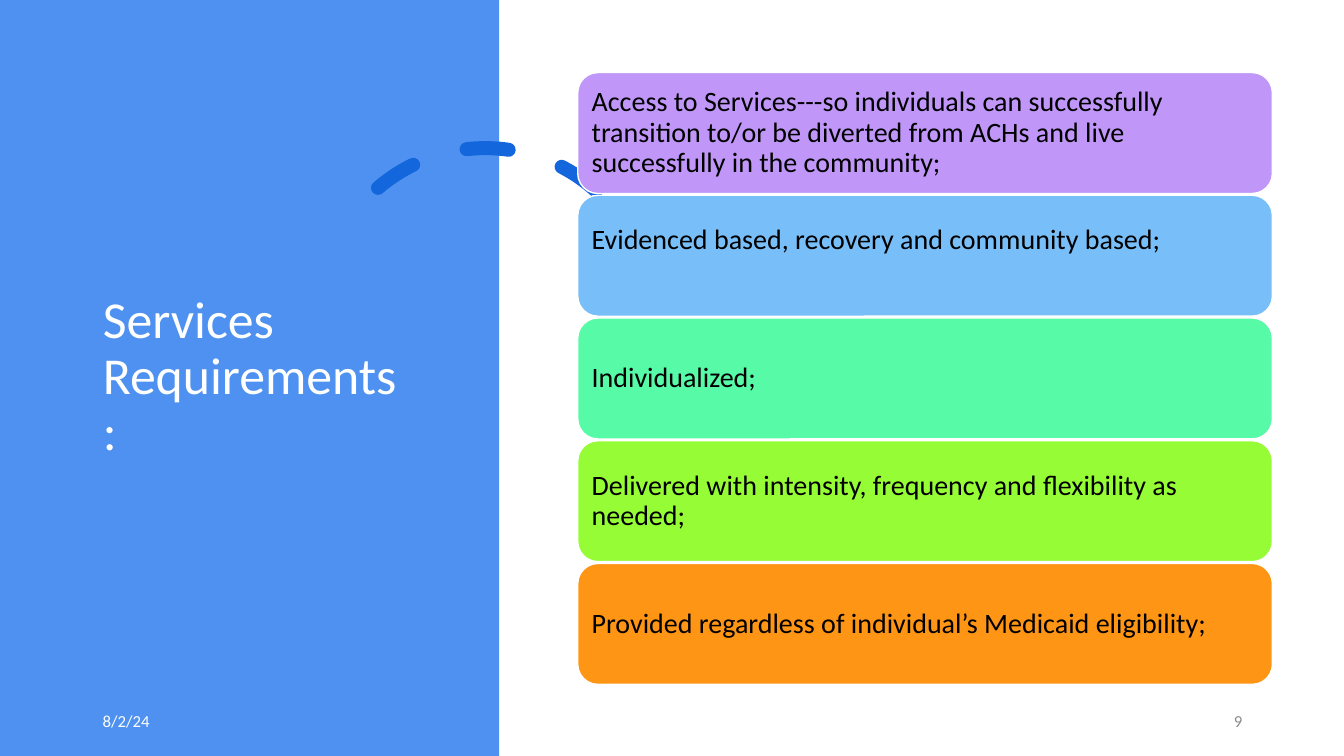
"""Build the Services Requirements slide with five stacked requirement cards."""
from pptx import Presentation
from pptx.dml.color import RGBColor
from pptx.enum import dml, shapes, text
from pptx.util import Inches, Pt

WHITE = RGBColor(0xFF, 0xFF, 0xFF)
BLACK = RGBColor(0x00, 0x00, 0x00)
GRAY = RGBColor(0x8C, 0x8C, 0x8C)
PANEL_BLUE = RGBColor(0x4E, 0x91, 0xF0)
ARC_BLUE = RGBColor(0x13, 0x66, 0xDC)
PURPLE = RGBColor(0xC0, 0x97, 0xF8)
SKY = RGBColor(0x78, 0xBE, 0xF8)
MINT = RGBColor(0x57, 0xFA, 0xA6)
LIME = RGBColor(0x96, 0xFC, 0x36)
ORANGE = RGBColor(0xFF, 0x95, 0x14)

FONT = "Calibri"
CARD_TOP, CARD_HEIGHT, CARD_STEP = 0.72, 1.2, 1.2175
CARD_INSET = 0.14
REQUIREMENTS = [
    ("Access to Services---so individuals can successfully transition to/or be "
     "diverted from ACHs and live successfully in the community;", PURPLE, 0),
    ("Evidenced based, recovery and community based;", SKY, 0.3),
    ("Individualized;", MINT, 0),
    ("Delivered with intensity, frequency and flexibility as needed;", LIME, 0),
    ("Provided regardless of individual’s Medicaid eligibility;", ORANGE, 0),
]


def write(frame, words, size, color, align=text.PP_ALIGN.LEFT, spacing=None):
    frame.word_wrap = True
    frame.auto_size = text.MSO_AUTO_SIZE.NONE
    frame.vertical_anchor = text.MSO_ANCHOR.MIDDLE
    para = frame.paragraphs[0]
    para.text = words
    para.alignment = align
    para.line_spacing = spacing
    para.font.name = FONT
    para.font.size = Pt(size)
    para.font.color.rgb = color


def add_panel(page):
    panel = page.shapes.add_shape(
        shapes.MSO_SHAPE.RECTANGLE, 0, 0, Inches(4.95), Inches(7.5))
    panel.shadow.inherit = False
    panel.fill.solid()
    panel.fill.fore_color.rgb = PANEL_BLUE
    panel.line.fill.background()


def add_dashed_arc(page):
    arc = page.shapes.add_shape(
        shapes.MSO_SHAPE.ARC, Inches(3.18), Inches(1.47), Inches(3.27), Inches(3.27))
    arc.shadow.inherit = False
    arc.rotation = 345.8
    arc.adjustments[0] = 146.13
    arc.adjustments[1] = 0
    arc.fill.background()
    arc.line.color.rgb = ARC_BLUE
    arc.line.width = Pt(10)
    arc.line.dash_style = dml.MSO_LINE.DASH
    arc.line._get_or_add_ln().set("cap", "rnd")


def add_title(page, words):
    title = page.shapes.title
    title.left, title.top = Inches(0.92), Inches(0.7)
    title.width, title.height = Inches(3.23), Inches(6.09)
    write(title.text_frame, words, 37, WHITE, spacing=0.9)
    page.shapes._spTree.append(title._element)


def add_footer(page, words, left, width, color, align):
    box = page.shapes.add_textbox(
        Inches(left), Inches(6.95), Inches(width), Inches(0.4))
    write(box.text_frame, words, 12, color, align)


def add_card(page, index, words, color, lift):
    card = page.shapes.add_shape(
        shapes.MSO_SHAPE.ROUNDED_RECTANGLE, Inches(5.73),
        Inches(CARD_TOP + index * CARD_STEP), Inches(6.89), Inches(CARD_HEIGHT))
    card.shadow.inherit = False
    card.fill.solid()
    card.fill.fore_color.rgb = color
    card.line.color.rgb = WHITE
    card.line.width = Pt(1)
    frame = card.text_frame
    frame.margin_left = frame.margin_right = Inches(0.08)
    frame.margin_top = Inches(CARD_INSET)
    frame.margin_bottom = Inches(CARD_INSET + lift)
    write(frame, words, 20, BLACK, spacing=0.9)


def main():
    deck = Presentation()
    deck.slide_width, deck.slide_height = Inches(13.33), Inches(7.5)
    page = deck.slides.add_slide(deck.slide_layouts[5])
    add_panel(page)
    add_dashed_arc(page)
    add_title(page, "Services Requirements:")
    add_footer(page, "8/2/24", 0.92, 3, WHITE, text.PP_ALIGN.LEFT)
    add_footer(page, "9", 10.57, 1.85, GRAY, text.PP_ALIGN.RIGHT)
    for index, (words, color, lift) in enumerate(REQUIREMENTS):
        add_card(page, index, words, color, lift)
    deck.save("out.pptx")


if __name__ == "__main__":
    main()
